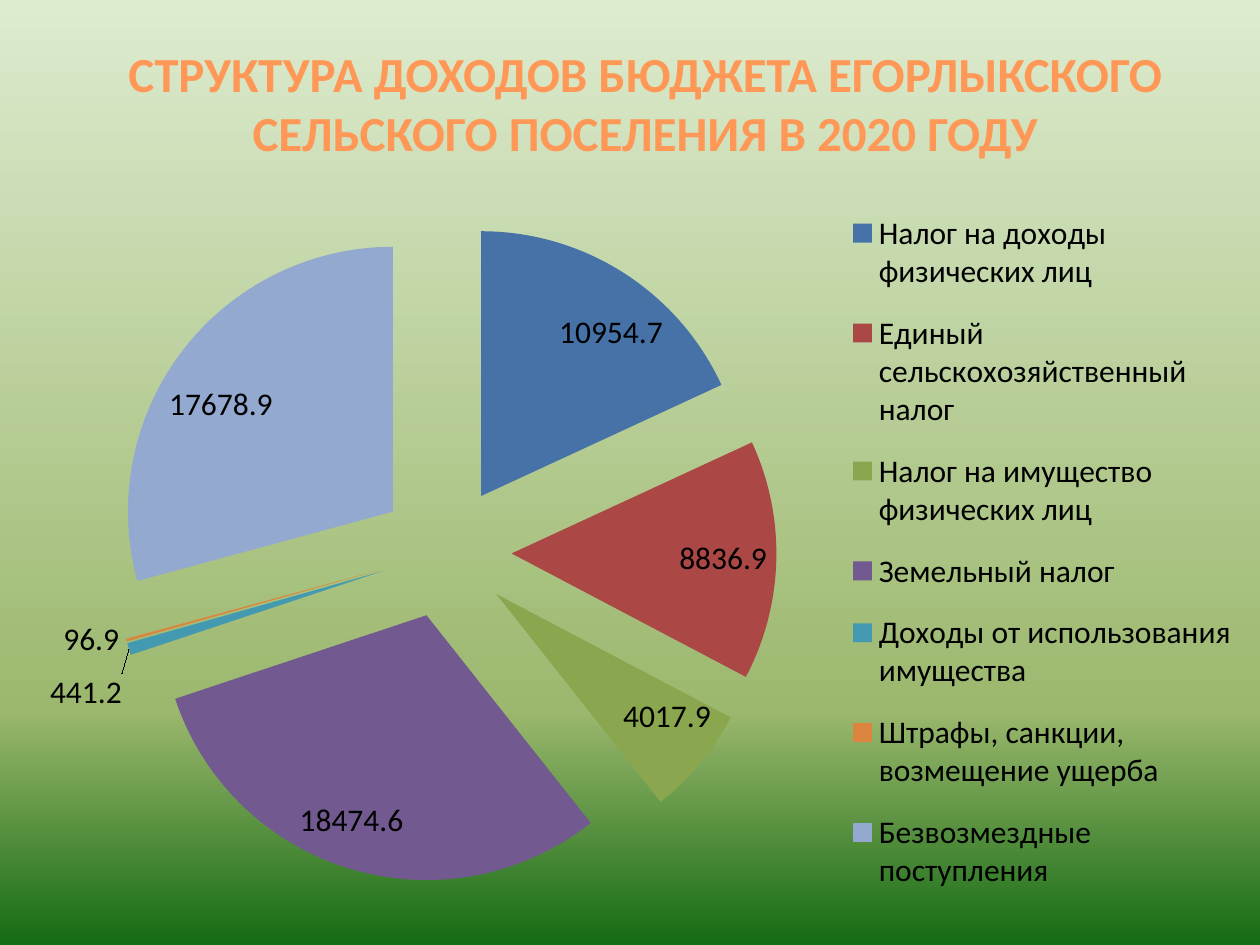
from copy import deepcopy

from lxml.etree import SubElement
from pptx import Presentation
from pptx.chart.data import CategoryChartData
from pptx.dml.color import RGBColor
from pptx.enum.chart import XL_CHART_TYPE as ChartType
from pptx.enum.chart import XL_LABEL_POSITION as LabelPosition
from pptx.enum.chart import XL_LEGEND_POSITION as LegendPosition
from pptx.enum.text import MSO_ANCHOR as Anchor
from pptx.enum.text import PP_ALIGN as Align
from pptx.oxml import parse_xml
from pptx.oxml.ns import nsdecls, qn
from pptx.util import Inches, Pt

TITLE = "СТРУКТУРА ДОХОДОВ БЮДЖЕТА ЕГОРЛЫКСКОГО СЕЛЬСКОГО ПОСЕЛЕНИЯ В 2020 ГОДУ"
INCOME = [
    ("Налог на доходы физических лиц", 10954.7, "income_tax"),
    ("Единый сельскохозяйственный налог", 8836.9, "farm_tax"),
    ("Налог на имущество физических лиц", 4017.9, "property_tax"),
    ("Земельный налог", 18474.6, "land_tax"),
    ("Доходы от использования имущества", 441.2, "property_use"),
    ("Штрафы, санкции, возмещение ущерба", 96.9, "fines"),
    ("Безвозмездные поступления", 17678.9, "grants"),
]
COLORS = {
    "title": "FF9856",
    "text": "000000",
    "income_tax": "4672A8",
    "farm_tax": "AB4744",
    "property_tax": "8AA64F",
    "land_tax": "725990",
    "property_use": "4299B0",
    "fines": "DC853E",
    "grants": "93A9CF",
}
BACKGROUND_STOPS = [(0, "DDEBCF"), (75, "9CB86E"), (100, "156B13")]
FONT = "Calibri"
EXPLOSION = 25

# left, top, width, height: inches on the slide, shares inside the chart
TITLE_BOX = (0.83, 0.29, 8.58, 1.04)
CHART_BOX = (0.12, 1.33, 9.76, 6.04)
PIE_SHARE = (0.08, 0.07, 0.54, 0.87)
LEGEND_SHARE = (0.67, 0.03, 0.33, 0.95)


def format_font(font, size, color, bold=False):
    font.name, font.size, font.bold = FONT, Pt(size), bold
    font.color.rgb = RGBColor.from_string(COLORS[color])


def write_text(shape, text, size, color, bold=False, align=Align.CENTER):
    frame = shape.text_frame
    frame.word_wrap = True
    frame.vertical_anchor = Anchor.MIDDLE
    paragraph = frame.paragraphs[0]
    paragraph.alignment = align
    run = paragraph.add_run()
    run.text = text
    format_font(run.font, size, color, bold)


def paint_background(slide):
    fill = slide.background.fill
    fill.gradient()
    fill.gradient_angle = 270
    last_stop = slide.background._cSld.find(".//" + qn("a:gsLst"))[-1]
    last_stop.addnext(deepcopy(last_stop))
    for stop, (percent, color) in zip(fill.gradient_stops, BACKGROUND_STOPS):
        stop.position = percent / 100
        stop.color.rgb = RGBColor.from_string(color)


def manual_layout(shares, inner=False):
    """Return a c:layout element that fixes a chart part's place."""
    layout = parse_xml(f"<c:layout {nsdecls('c')}/>")
    manual = SubElement(layout, qn("c:manualLayout"))
    settings = [("layoutTarget", "inner")] if inner else []
    settings += [("xMode", "edge"), ("yMode", "edge")]
    settings += zip("xywh", map(str, shares))
    for tag, value in settings:
        SubElement(manual, qn("c:" + tag)).set("val", value)
    return layout


def add_income_pie(slide):
    data = CategoryChartData()
    data.categories = [name for name, _, _ in INCOME]
    data.add_series("Series 1", [value for _, value, _ in INCOME])
    box = map(Inches, CHART_BOX)
    chart = slide.shapes.add_chart(ChartType.PIE, *box, data).chart
    chart.has_title = False
    format_font(chart.font, 18, "text")

    plot = chart.plots[0]
    plot.vary_by_categories = True
    series = plot.series[0]
    for index, (_, _, color) in enumerate(INCOME):
        fill = series.points[index].format.fill
        fill.solid()
        fill.fore_color.rgb = RGBColor.from_string(COLORS[color])
    explosion = parse_xml(f'<c:explosion {nsdecls("c")} val="{EXPLOSION}"/>')
    series._element.find(qn("c:dPt")).addprevious(explosion)

    labels = series.data_labels
    labels.show_value = True
    labels.position = LabelPosition.BEST_FIT
    format_font(labels.font, 18, "text")

    chart.has_legend = True
    legend = chart.legend
    legend.position = LegendPosition.RIGHT
    legend.include_in_layout = False
    format_font(legend.font, 18, "text")

    plot_area = chart._chartSpace.find(".//" + qn("c:plotArea"))
    for old_layout in plot_area.findall(qn("c:layout")):
        plot_area.remove(old_layout)
    plot_area.insert(0, manual_layout(PIE_SHARE, inner=True))
    for old_layout in legend._element.findall(qn("c:layout")):
        legend._element.remove(old_layout)
    legend_position = legend._element.find(qn("c:legendPos"))
    legend_position.addnext(manual_layout(LEGEND_SHARE))


def main():
    presentation = Presentation()
    presentation.slide_width = Inches(10)
    presentation.slide_height = Inches(7.5)
    slide = presentation.slides.add_slide(presentation.slide_layouts[5])
    paint_background(slide)
    title = slide.shapes.title
    title.left, title.top, title.width, title.height = map(Inches, TITLE_BOX)
    write_text(title, TITLE, size=28, color="title", bold=True)
    add_income_pie(slide)
    presentation.save("out.pptx")


if __name__ == "__main__":
    main()
